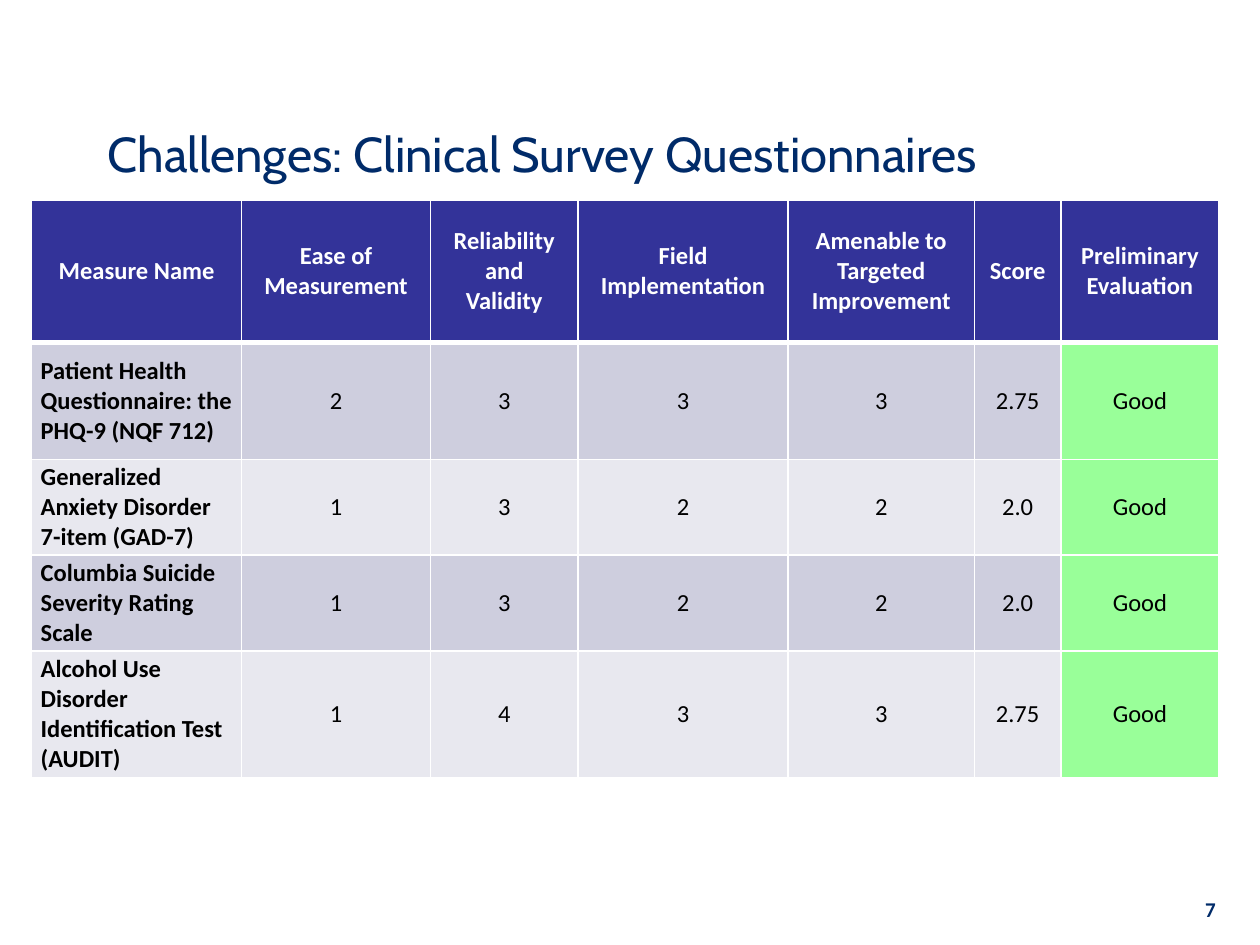
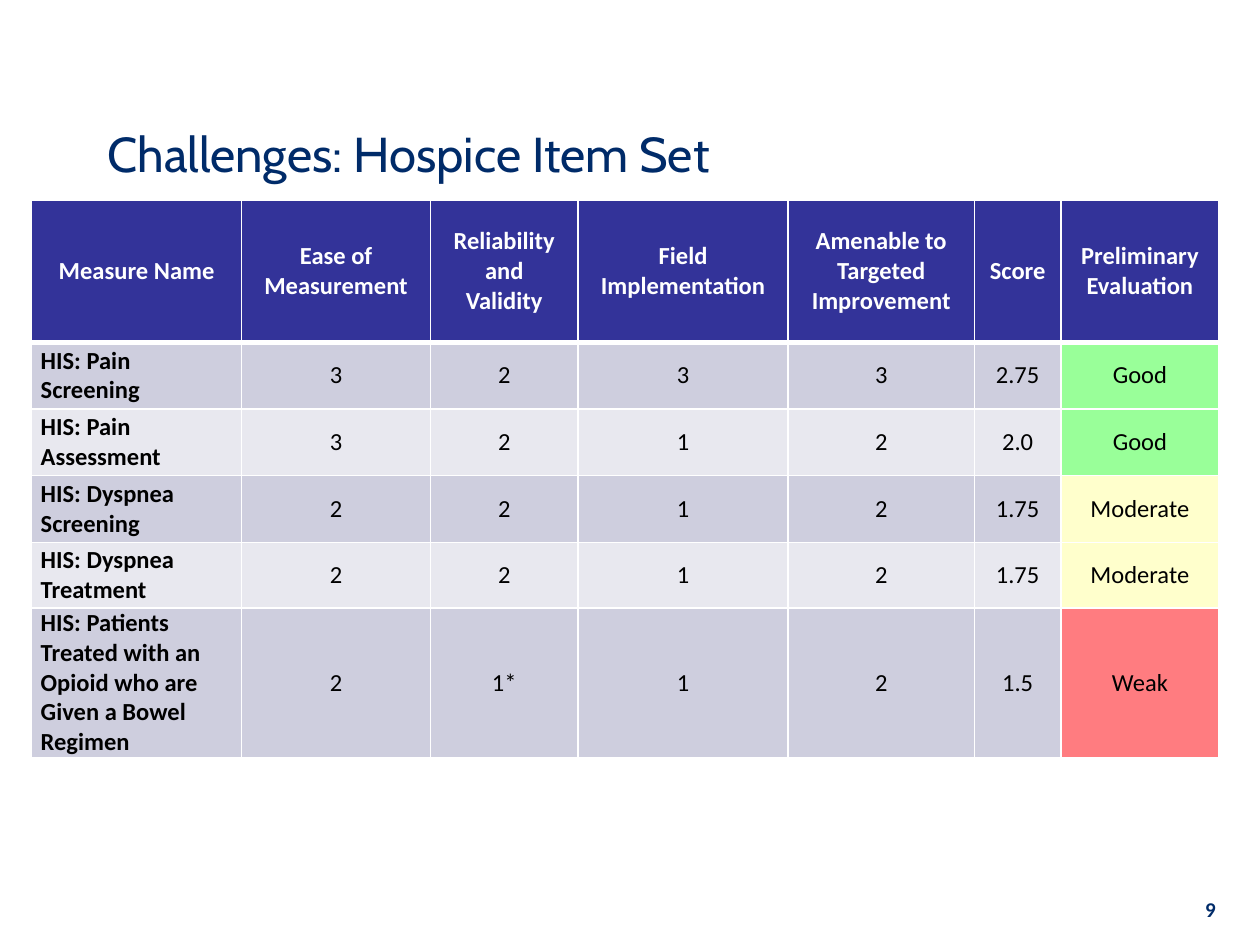
from lxml.etree import SubElement
from pptx import Presentation
from pptx.dml.color import RGBColor
from pptx.enum.text import MSO_ANCHOR, MSO_AUTO_SIZE, PP_ALIGN
from pptx.oxml.ns import qn
from pptx.util import Cm, Pt

COLORS = {
    "navy": "002B69", "header": "333399", "white": "FFFFFF", "black": "000000",
    "band_dark": "CECEDE", "band_light": "E8E8EF",
}
RATING_COLORS = {"Good": "99FF99", "Moderate": "FFFFCC", "Weak": "FF7C80"}

TITLE_FONT = {"name": "Cabin", "size": Pt(28), "bold": False}
NUMBER_FONT = {"name": "Calibri", "size": Pt(12), "bold": True}
STRONG_FONT = {"name": "Calibri", "size": Pt(14), "bold": True}
BODY_FONT = {**STRONG_FONT, "bold": False}
CELL_FORMAT = {
    "vertical_anchor": MSO_ANCHOR.MIDDLE,
    "margin_left": Cm(0.18), "margin_right": Cm(0.18),
    "margin_top": 0, "margin_bottom": 0,
}
FRAME_FORMAT = {
    "word_wrap": True, "auto_size": MSO_AUTO_SIZE.NONE,
    "vertical_anchor": MSO_ANCHOR.MIDDLE,
}

HEADERS = ["Measure Name", "Ease of Measurement", "Reliability and Validity",
           "Field Implementation", "Amenable to Targeted Improvement", "Score",
           "Preliminary Evaluation"]
INDENTED_COLUMNS = {1, 2, 3, 4, 6}
COLUMN_WIDTHS = [4.23, 3.81, 2.97, 4.24, 3.75, 1.75, 3.18]
HEADER_HEIGHT = 2.87

# Each row: height in cm, then the cell texts
SLIDES = [
    {"title": "Challenges: Clinical Survey Questionnaires", "number": "7", "rows": [
        (2.36, "Patient Health Questionnaire: the PHQ-9 (NQF 712)",
         "2", "3", "3", "3", "2.75", "Good"),
        (1.93, "Generalized Anxiety Disorder 7-item (GAD-7)",
         "1", "3", "2", "2", "2.0", "Good"),
        (1.93, "Columbia Suicide Severity Rating Scale",
         "1", "3", "2", "2", "2.0", "Good"),
        (2.55, "Alcohol Use Disorder Identification Test (AUDIT)",
         "1", "4", "3", "3", "2.75", "Good"),
    ]},
    {"title": "Challenges: Hospice Item Set", "number": "9", "rows": [
        (1.34, "HIS: Pain Screening", "3", "2", "3", "3", "2.75", "Good"),
        (1.35, "HIS: Pain Assessment", "3", "2", "1", "2", "2.0", "Good"),
        (1.35, "HIS: Dyspnea Screening", "2", "2", "1", "2", "1.75", "Moderate"),
        (1.32, "HIS: Dyspnea Treatment", "2", "2", "1", "2", "1.75", "Moderate"),
        (2.57, "HIS: Patients Treated with an Opioid who are Given a Bowel Regimen",
         "2", "1*", "1", "2", "1.5", "Weak"),
    ]},
]


def write_text(text_frame, text, font_format, color, alignment):
    paragraph = text_frame.paragraphs[0]
    paragraph.alignment = alignment
    run = paragraph.add_run()
    run.text = text
    for name, value in font_format.items():
        setattr(run.font, name, value)
    run.font.color.rgb = RGBColor.from_string(COLORS[color])
    return paragraph


def add_borders(cell, widths):
    properties = cell._tc.get_or_add_tcPr()
    for side, width in widths.items():
        line = SubElement(properties, qn(f"a:ln{side}"), w=str(Pt(width)))
        fill = SubElement(line, qn("a:solidFill"))
        SubElement(fill, qn("a:srgbClr"), val=COLORS["white"])


presentation = Presentation()
presentation.slide_width = Cm(25.4)
presentation.slide_height = Cm(19.05)

for content in SLIDES:
    slide = presentation.slides.add_slide(presentation.slide_layouts[5])

    # Title and slide number
    title = slide.shapes.title
    title.left, title.top, title.width, title.height = (
        Cm(1.91), Cm(1.7), Cm(21.59), Cm(2.75))
    number_box = slide.shapes.add_textbox(Cm(19.48), Cm(17.98), Cm(5.28), Cm(0.69))
    for shape in (title, number_box):
        for name, value in FRAME_FORMAT.items():
            setattr(shape.text_frame, name, value)
    write_text(title.text_frame, content["title"], TITLE_FONT, "navy", PP_ALIGN.LEFT)
    write_text(number_box.text_frame, content["number"], NUMBER_FONT, "navy",
               PP_ALIGN.RIGHT)

    # Evaluation table
    rows = [(HEADER_HEIGHT, *HEADERS), *content["rows"]]
    table = slide.shapes.add_table(
        len(rows), len(HEADERS), Cm(0.64), Cm(4.03),
        Cm(sum(COLUMN_WIDTHS)), Cm(sum(row[0] for row in rows))).table
    for column, width in zip(table.columns, COLUMN_WIDTHS):
        column.width = Cm(width)

    for row_index, (height, *texts) in enumerate(rows):
        table.rows[row_index].height = Cm(height)
        is_header = row_index == 0
        band = "header" if is_header else "band_dark" if row_index % 2 else "band_light"
        borders = {"L": 1, "R": 1, "T": 3 if row_index == 1 else 1,
                   "B": 3 if is_header else 1}

        for column_index, text in enumerate(texts):
            cell = table.cell(row_index, column_index)
            for name, value in CELL_FORMAT.items():
                setattr(cell, name, value)
            add_borders(cell, borders)
            cell.fill.solid()
            cell.fill.fore_color.rgb = RGBColor.from_string(
                RATING_COLORS.get(text, COLORS[band]))

            is_name = column_index == 0
            paragraph = write_text(
                cell.text_frame, text,
                STRONG_FONT if is_header or is_name else BODY_FONT,
                "white" if is_header else "black",
                PP_ALIGN.LEFT if is_name and not is_header else PP_ALIGN.CENTER)
            if is_header and column_index in INDENTED_COLUMNS:
                for margin in ("marL", "marR"):
                    paragraph._p.get_or_add_pPr().set(margin, str(Cm(0.2)))

presentation.save("out.pptx")
